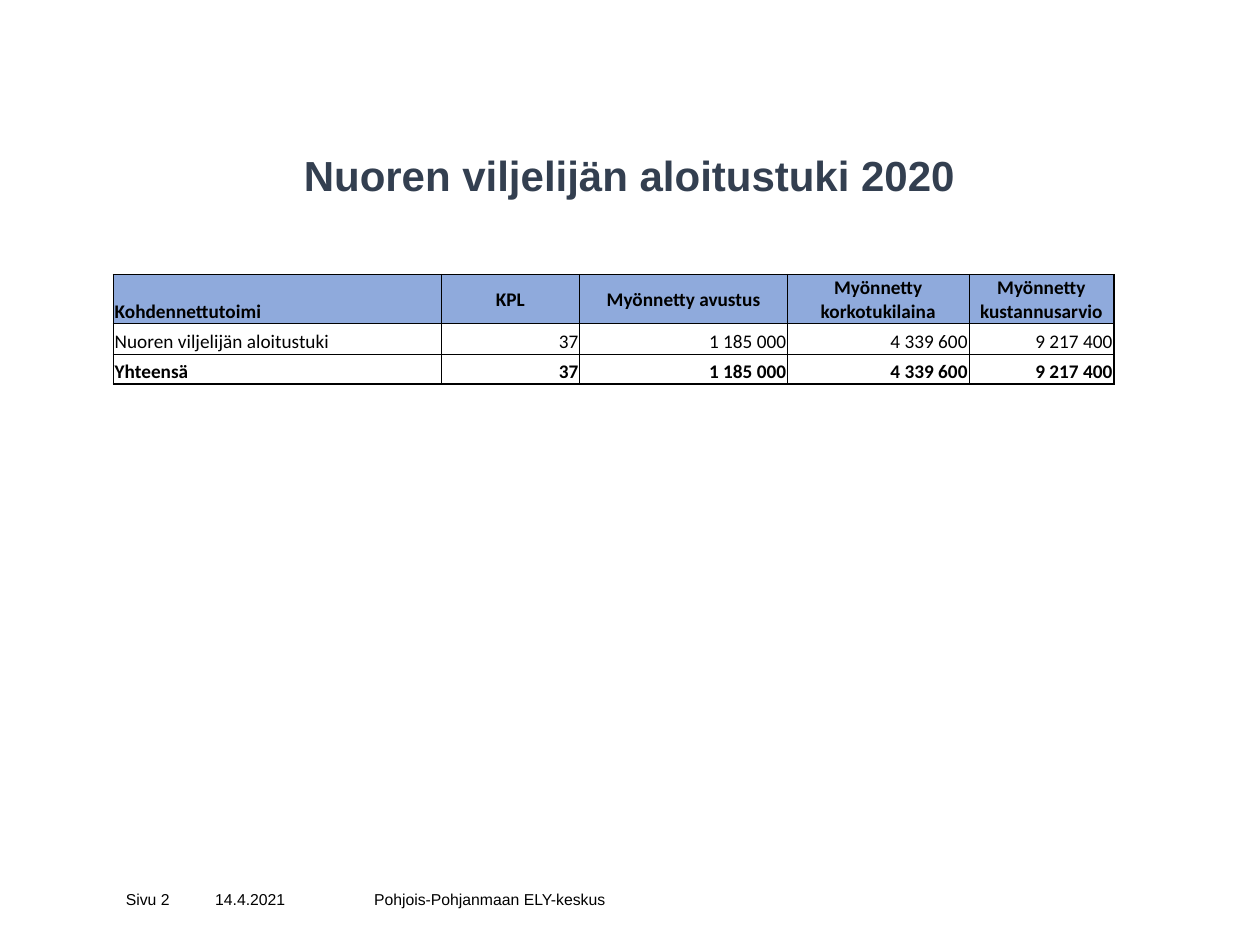
from lxml.etree import SubElement
from pptx import Presentation
from pptx.dml.color import RGBColor
from pptx.enum.text import MSO_ANCHOR, PP_ALIGN
from pptx.oxml.ns import qn
from pptx.util import Inches, Pt


def color(value):
    return RGBColor.from_string(value)


def write(paragraph, text, align, font):
    paragraph.alignment = align
    run = paragraph.add_run()
    run.text = text
    run.font.color.rgb = color(font["color"])
    for key in ("name", "size", "bold"):
        setattr(run.font, key, font[key])


presentation = Presentation()
presentation.slide_width = Inches(10)
presentation.slide_height = Inches(7.5)
slide = presentation.slides.add_slide(presentation.slide_layouts[6])

title_font = {"name": "Arial", "size": Pt(24), "bold": True, "color": "333F50"}
footer_font = {"name": "Arial", "size": Pt(9), "bold": False, "color": "000000"}
labels = [
    ("Nuoren viljelijän aloitustuki 2020", 0.9, 0.84, 8.19, 1.1, PP_ALIGN.CENTER, title_font),
    ("Sivu 2", 0.9, 7.06, 0.71, 0.15, PP_ALIGN.LEFT, footer_font),
    ("14.4.2021", 1.61, 7.06, 1.26, 0.16, PP_ALIGN.LEFT, footer_font),
    ("Pohjois-Pohjanmaan ELY-keskus", 2.87, 7.06, 4.41, 0.15, PP_ALIGN.LEFT, footer_font),
]
label_frame = {
    "word_wrap": True,
    "vertical_anchor": MSO_ANCHOR.MIDDLE,
    "margin_top": 0,
    "margin_bottom": 0,
}
for text, left, top, width, height, align, font in labels:
    label = slide.shapes.add_textbox(Inches(left), Inches(top), Inches(width), Inches(height))
    for key, value in label_frame.items():
        setattr(label.text_frame, key, value)
    write(label.text_frame.paragraphs[0], text, align, font)

grants = [
    ["Kohdennettutoimi", "KPL", "Myönnetty avustus", "Myönnetty korkotukilaina", "Myönnetty kustannusarvio"],
    ["Nuoren viljelijän aloitustuki", "37", "1 185 000", "4 339 600", "9 217 400"],
    ["Yhteensä", "37", "1 185 000", "4 339 600", "9 217 400"],
]
column_widths = [2.6, 1.1, 1.65, 1.44, 1.15]
row_heights = [0.39, 0.24, 0.24]
last_row, last_column = len(grants) - 1, len(column_widths) - 1

grants_table = slide.shapes.add_table(
    len(grants), len(column_widths), Inches(0.9), Inches(2.18),
    Inches(sum(column_widths)), Inches(sum(row_heights)),
).table
for column, width in zip(grants_table.columns, column_widths):
    column.width = Inches(width)
for row, height in zip(grants_table.rows, row_heights):
    row.height = Inches(height)

cell_margins = {
    "margin_left": Inches(0.01),
    "margin_top": Inches(0.01),
    "margin_right": Inches(0.01),
    "margin_bottom": 0,
}
for r, values in enumerate(grants):
    for c, text in enumerate(values):
        cell = grants_table.cell(r, c)
        for key, value in cell_margins.items():
            setattr(cell, key, value)
        is_header = r == 0
        if c == 0:
            align = PP_ALIGN.LEFT
        else:
            align = PP_ALIGN.CENTER if is_header else PP_ALIGN.RIGHT
        cell.vertical_anchor = MSO_ANCHOR.MIDDLE if is_header and c else MSO_ANCHOR.BOTTOM
        cell_font = {"name": "Calibri", "size": Pt(11), "bold": r != 1, "color": "000000"}
        write(cell.text_frame.paragraphs[0], text, align, cell_font)

        outer_edges = {"lnL": c == 0, "lnR": c == last_column, "lnT": r == 0, "lnB": r == last_row}
        properties = cell._tc.get_or_add_tcPr()
        for edge, is_outer in outer_edges.items():
            border = SubElement(properties, qn(f"a:{edge}"), w=str(Pt(1 if is_outer else 0.5)))
            border_fill = SubElement(border, qn("a:solidFill"))
            SubElement(border_fill, qn("a:srgbClr"), val="000000")
        cell.fill.solid()
        cell.fill.fore_color.rgb = color("8FAADC" if is_header else "FFFFFF")

presentation.save("out.pptx")
